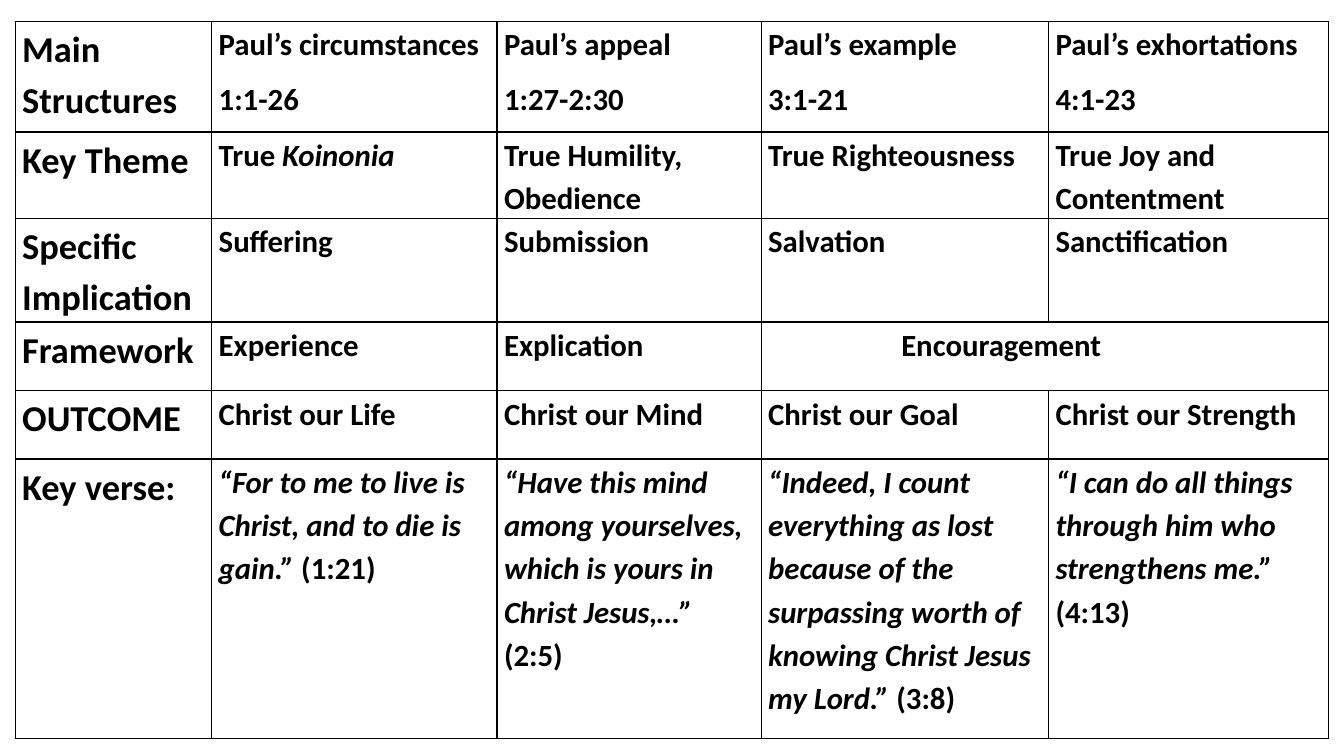
from lxml import etree
from pptx import Presentation
from pptx.dml.color import RGBColor
from pptx.enum.text import MSO_ANCHOR
from pptx.oxml.ns import qn
from pptx.util import Inches, Pt

TOP = MSO_ANCHOR.TOP
COLORS = {"ink": "000000", "paper": "FFFFFF"}
SLIDE_WIDTH, SLIDE_HEIGHT = 13.33, 7.5
TABLE_BOX = (0.15, 0.21, 13.03, 6.94)
COLUMN_WEIGHTS = [1.95, 2.83, 2.62, 2.85, 2.78]
ROW_WEIGHTS = [1.1, 0.68, 1.03, 0.68, 0.68, 2.77]
HEADING_SIZE, BODY_SIZE = 26, 22
BORDER_WIDTH = Pt(1)
CELL_FORMAT = {
    "margin_left": Inches(0.07),
    "margin_right": Inches(0.07),
    "margin_top": 0,
    "margin_bottom": 0,
    "vertical_anchor": TOP,
}
PARAGRAPH_FORMAT = {"line_spacing": 1.15, "space_after": Pt(8)}
FRAMEWORK_ROW, MERGE_START, MERGE_END = 3, 3, 4
ENCOURAGEMENT_INDENT = Inches(1.39)

OUTLINE = [
    ["Main Structures", "Paul’s circumstances\n1:1-26", "Paul’s appeal\n1:27-2:30",
     "Paul’s example\n3:1-21", "Paul’s exhortations\n4:1-23"],
    ["Key Theme", "True *Koinonia*", "True Humility, Obedience",
     "True Righteousness", "True Joy and Contentment"],
    ["Specific Implication", "Suffering", "Submission", "Salvation", "Sanctification"],
    ["Framework", "Experience", "Explication", "Encouragement"],
    ["OUTCOME", "Christ our Life", "Christ our Mind", "Christ our Goal",
     "Christ our Strength"],
    ["Key verse:",
     "*“For to me to live is Christ, and to die is gain.”* (1:21)",
     "*“Have this mind among yourselves, which is yours in Christ Jesus,…”* (2:5)",
     "*“Indeed, I count everything as lost because of the surpassing worth of "
     "knowing Christ Jesus my Lord.”* (3:8)",
     "*“I can do all things through him who strengthens me.”* (4:13)"],
]


def apply_format(target, values):
    for name, value in values.items():
        setattr(target, name, value)


def style_cell(cell):
    apply_format(cell, CELL_FORMAT)
    properties = cell._tc.get_or_add_tcPr()
    for side in ("a:lnL", "a:lnR", "a:lnT", "a:lnB"):
        line = etree.SubElement(properties, qn(side), w=str(BORDER_WIDTH))
        fill = etree.SubElement(line, qn("a:solidFill"))
        etree.SubElement(fill, qn("a:srgbClr"), val=COLORS["ink"])
    cell.fill.solid()
    cell.fill.fore_color.rgb = RGBColor.from_string(COLORS["paper"])


def write_cell(cell, text, size):
    frame = cell.text_frame
    for index, line in enumerate(text.split("\n")):
        paragraph = frame.add_paragraph() if index else frame.paragraphs[0]
        apply_format(paragraph, PARAGRAPH_FORMAT)
        for position, part in enumerate(line.split("*")):
            if part:
                run = paragraph.add_run()
                run.text = part
                apply_format(run.font, {"name": "Calibri", "size": Pt(size),
                                        "bold": True, "italic": position % 2 == 1})
                run.font.color.rgb = RGBColor.from_string(COLORS["ink"])


def add_outline_table(slide, left, top, width, height):
    shape = slide.shapes.add_table(
        len(ROW_WEIGHTS), len(COLUMN_WEIGHTS),
        Inches(left), Inches(top), Inches(width), Inches(height))
    table = shape.table
    apply_format(table, {"first_row": False, "horz_banding": False})
    for column, weight in zip(table.columns, COLUMN_WEIGHTS):
        column.width = Inches(width * weight / sum(COLUMN_WEIGHTS))
    for row, weight in zip(table.rows, ROW_WEIGHTS):
        row.height = Inches(height * weight / sum(ROW_WEIGHTS))
    for cell in table.iter_cells():
        style_cell(cell)
    for row_index, texts in enumerate(OUTLINE):
        for column_index, text in enumerate(texts):
            size = BODY_SIZE if column_index else HEADING_SIZE
            write_cell(table.cell(row_index, column_index), text, size)
    encouragement = table.cell(FRAMEWORK_ROW, MERGE_START)
    encouragement.merge(table.cell(FRAMEWORK_ROW, MERGE_END))
    encouragement.margin_left = ENCOURAGEMENT_INDENT


def main():
    presentation = Presentation()
    presentation.slide_width = Inches(SLIDE_WIDTH)
    presentation.slide_height = Inches(SLIDE_HEIGHT)
    slide = presentation.slides.add_slide(presentation.slide_layouts[6])
    add_outline_table(slide, *TABLE_BOX)
    presentation.save("out.pptx")


if __name__ == "__main__":
    main()
